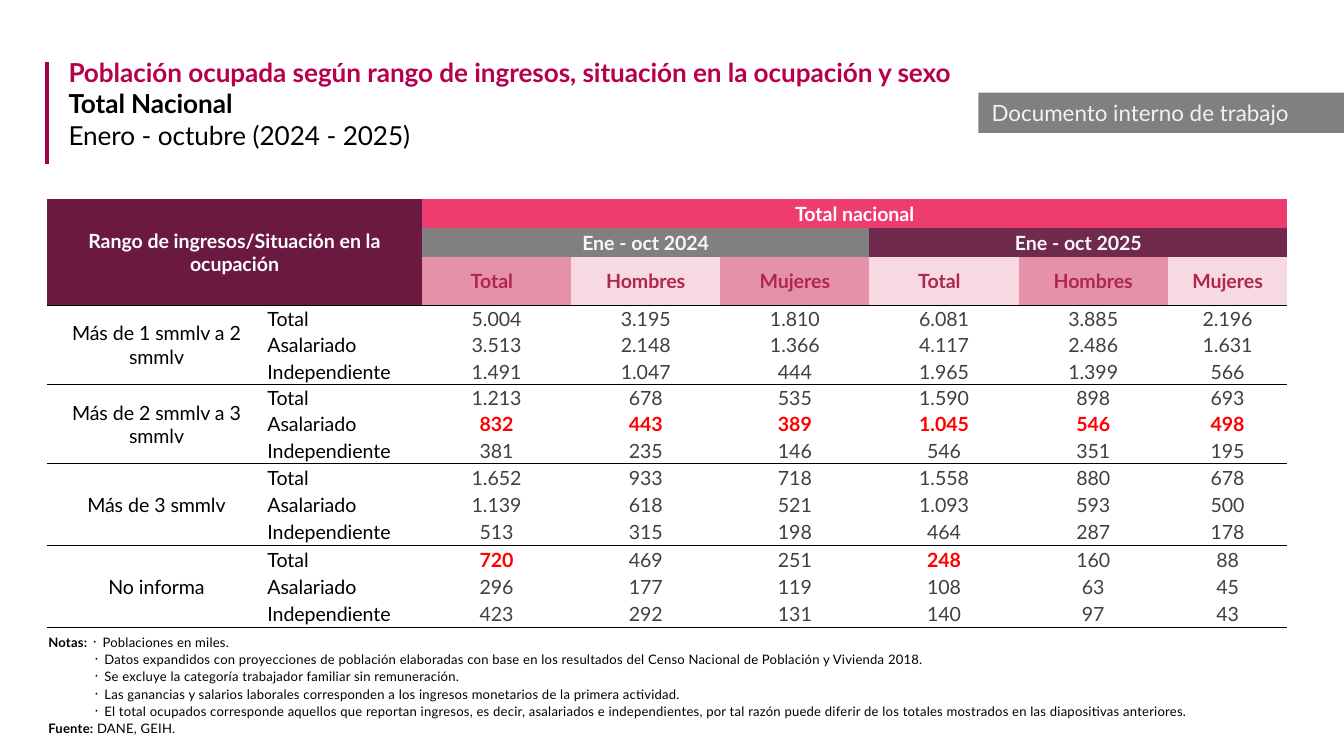
from dataclasses import dataclass
from typing import Optional

from lxml.etree import SubElement
from pptx import Presentation
from pptx.dml.color import RGBColor
from pptx.enum.shapes import MSO_CONNECTOR as Connector, MSO_SHAPE as Shape
from pptx.enum.text import MSO_ANCHOR as Anchor, PP_ALIGN as Align
from pptx.oxml.ns import qn
from pptx.util import Inches, Pt


@dataclass(frozen=True)
class Theme:
    font: str = "Lato"
    title_size: float = 14
    tag_size: float = 12
    table_size: float = 10.5
    note_size: float = 7
    title: str = "B6004B"
    accent: str = "9C0646"
    black: str = "000000"
    white: str = "FFFFFF"
    tag_text: str = "F2F2F2"
    period_text: str = "F8F8F8"
    figure: str = "404040"
    alert: str = "FF0000"
    column_text: str = "AD2750"
    gray: str = "808080"
    wine: str = "6B1940"
    plum: str = "6F2A4D"
    pink: str = "EF3C6F"
    rose: str = "E691AA"
    blush: str = "F7D9E1"


@dataclass(frozen=True)
class Header:
    row: int
    column: int
    last_row: int
    last_column: int
    text: str
    fill: str
    color: str
    right_margin: float = 0.01


@dataclass(frozen=True)
class IncomeGroup:
    name: str
    height: float
    rows: tuple[str, str, str]


THEME = Theme()
COLUMN_WIDTHS = [1.63, 1.16] + [1.11] * 5 + [0.89]
HEADER_HEIGHTS = [0.22, 0.21, 0.36]
OCCUPATIONS = ("Total", "Asalariado", "Independiente")
PLAIN_STYLE = "{2D5ABB26-0587-4C30-8999-92F81FD0307C}"

HEADERS = [
    Header(0, 0, 2, 1, "Rango de ingresos/Situación en la ocupación", THEME.wine, THEME.white),
    Header(0, 2, 0, 7, "Total nacional", THEME.pink, THEME.white),
    Header(1, 2, 1, 4, "Ene - oct 2024", THEME.gray, THEME.period_text),
    Header(1, 5, 1, 7, "Ene - oct 2025", THEME.plum, THEME.period_text),
] + [
    Header(2, 2 + index, 2, 2 + index, text, (THEME.rose, THEME.blush)[index % 2],
           THEME.column_text, 0.08 if text == "Total" else 0.01)
    for index, text in enumerate(("Total", "Hombres", "Mujeres") * 2)
]

GROUPS = [
    IncomeGroup("Más de 1 smmlv a 2 smmlv", 0.59, (
        "5.004 3.195 1.810 6.081 3.885 2.196",
        "3.513 2.148 1.366 4.117 2.486 1.631",
        "1.491 1.047 444 1.965 1.399 566")),
    IncomeGroup("Más de 2 smmlv a 3 smmlv", 0.59, (
        "1.213 678 535 1.590 898 693",
        "832 443 389 1.045 546 498",
        "381 235 146 546 351 195")),
    IncomeGroup("Más de 3 smmlv", 0.61, (
        "1.652 933 718 1.558 880 678",
        "1.139 618 521 1.093 593 500",
        "513 315 198 464 287 178")),
    IncomeGroup("No informa", 0.61, (
        "720 469 251 248 160 88",
        "296 177 119 108 63 45",
        "423 292 131 140 97 43")),
]
HIGHLIGHTS = {(7, column) for column in range(2, 8)} | {(12, 2), (12, 5)}

NOTES = [
    "Poblaciones en miles.",
    "Datos expandidos con proyecciones de población elaboradas con base en los resultados "
    "del Censo Nacional de Población y Vivienda 2018.",
    "Se excluye la categoría trabajador familiar sin remuneración.",
    "Las ganancias y salarios laborales corresponden a los ingresos monetarios de la primera actividad.",
    "El total ocupados corresponde aquellos que reportan ingresos, es decir, asalariados e "
    "independientes, por tal razón puede diferir de los totales mostrados en las diapositivas anteriores.",
]


def set_font(font, size: float, color: str, bold: Optional[bool] = False, spacing: int = 0) -> None:
    font.name = THEME.font
    font.size = Pt(size)
    font.bold = bold
    font.color.rgb = RGBColor.from_string(color)
    if spacing:
        font._rPr.set("spc", str(spacing))


def add_box(page, left: float, top: float, width: float, height: float, margins: tuple):
    box = page.shapes.add_textbox(Inches(left), Inches(top), Inches(width), Inches(height))
    frame = box.text_frame
    frame.word_wrap = True
    frame.margin_left, frame.margin_top, frame.margin_right, frame.margin_bottom = map(Inches, margins)
    return frame


def next_para(frame, index: int):
    return frame.add_paragraph() if index else frame.paragraphs[0]


def add_title(page) -> None:
    frame = add_box(page, 0.44, 0.38, 9.56, 0.78, (0.07, 0.04, 0.07, 0.04))
    lines = [
        ("Población ocupada según rango de ingresos, situación en la ocupación y sexo", THEME.title, True),
        ("Total Nacional", THEME.black, True),
        ("Enero - octubre (2024 - 2025)", THEME.black, False),
    ]
    for index, (text, color, bold) in enumerate(lines):
        para = next_para(frame, index)
        para.text = text
        set_font(para.font, THEME.title_size, color, bold, -5)
    rule = page.shapes.add_connector(
        Connector.STRAIGHT, Inches(0.35), Inches(1.22), Inches(0.35), Inches(0.46))
    rule.line.color.rgb = RGBColor.from_string(THEME.accent)
    rule.line.width = Pt(2)
    SubElement(rule._element.spPr, qn("a:effectLst"))


def add_tag(page) -> None:
    tag = page.shapes.add_shape(Shape.RECTANGLE, Inches(7.28), Inches(0.69), Inches(2.72), Inches(0.3))
    tag.shadow.inherit = False
    tag.fill.solid()
    tag.fill.fore_color.rgb = RGBColor.from_string(THEME.gray)
    tag.line.fill.background()
    tag.text_frame.vertical_anchor = Anchor.TOP
    para = tag.text_frame.paragraphs[0]
    para.text = "Documento interno de trabajo"
    para.alignment = Align.LEFT
    set_font(para.font, THEME.tag_size, THEME.tag_text)


def write_cell(cell, text: str, color: str, bold: bool = False, align: Align = Align.CENTER) -> None:
    para = cell.text_frame.paragraphs[0]
    para.text = text
    para.alignment = align
    set_font(para.font, THEME.table_size, color, bold)


def set_borders(cell, top: bool, bottom: bool) -> None:
    properties = cell._tc.get_or_add_tcPr()
    for side, visible in (("lnL", False), ("lnR", False), ("lnT", top), ("lnB", bottom)):
        line = SubElement(properties, qn(f"a:{side}"), w=str(Pt(0.5)))
        if visible:
            fill = SubElement(line, qn("a:solidFill"))
            SubElement(fill, qn("a:srgbClr"), val=THEME.black)
        else:
            SubElement(line, qn("a:noFill"))


def add_income_table(page) -> None:
    size = len(OCCUPATIONS)
    heights = HEADER_HEIGHTS + [group.height / size for group in GROUPS for _ in OCCUPATIONS]
    table = page.shapes.add_table(
        len(heights), len(COLUMN_WIDTHS), Inches(0.35), Inches(1.48),
        Inches(sum(COLUMN_WIDTHS)), Inches(sum(heights))).table
    table.first_row = table.horz_banding = False
    table._tbl.tblPr.find(qn("a:tableStyleId")).text = PLAIN_STYLE
    for column, width in zip(table.columns, COLUMN_WIDTHS):
        column.width = Inches(width)
    for row, height in zip(table.rows, heights):
        row.height = Inches(height)

    first_body = len(HEADER_HEIGHTS)
    for row_index, row in enumerate(table.rows):
        in_body = row_index >= first_body
        starts_group = in_body and row_index % size == 0
        ends_group = row_index >= first_body - 1 and row_index % size == size - 1
        for column_index, cell in enumerate(row.cells):
            cell.vertical_anchor = Anchor.MIDDLE
            cell.margin_left = cell.margin_top = cell.margin_right = Inches(0.01)
            cell.margin_bottom = 0
            spans_group = column_index == 0 and row_index % size == 0
            set_borders(cell, starts_group, ends_group or spans_group)
            cell.fill.background()
            SubElement(cell.text_frame.paragraphs[0]._p, qn("a:endParaRPr"),
                       sz=str(int(THEME.table_size * 100)))

    for header in HEADERS:
        cell = table.cell(header.row, header.column)
        if (header.row, header.column) != (header.last_row, header.last_column):
            cell.merge(table.cell(header.last_row, header.last_column))
        cell.fill.solid()
        cell.fill.fore_color.rgb = RGBColor.from_string(header.fill)
        cell.margin_right = Inches(header.right_margin)
        write_cell(cell, header.text, header.color, True)

    for group_index, group in enumerate(GROUPS):
        top = first_body + group_index * size
        name_cell = table.cell(top, 0)
        name_cell.merge(table.cell(top + size - 1, 0))
        write_cell(name_cell, group.name, THEME.black)
        for row, (occupation, figures) in enumerate(zip(OCCUPATIONS, group.rows), top):
            write_cell(table.cell(row, 1), occupation, THEME.black, align=Align.LEFT)
            for column, figure in enumerate(figures.split(), 2):
                alert = (row, column) in HIGHLIGHTS
                write_cell(table.cell(row, column), figure, THEME.alert if alert else THEME.figure, alert)


def add_notes(page) -> None:
    frame = add_box(page, 0.35, 4.68, 9.24, 0.8, (0, 0.01, 0, 0))
    frame.vertical_anchor = Anchor.BOTTOM
    lines = [("Notas: " if index == 0 else "", f"᛫ {note}") for index, note in enumerate(NOTES)]
    lines.append(("Fuente: ", "DANE, GEIH."))
    for index, (label, text) in enumerate(lines):
        para = next_para(frame, index)
        para.line_spacing = 1.04
        para.space_before = Pt(0.6 if index else 0)
        para._p.get_or_add_pPr().set("marL", str(Inches(0.01 if label else 0.34)))
        set_font(para.font, THEME.note_size, THEME.black, None, 13)
        if label:
            span = para.add_run()
            span.text = label
            span.font.bold = True
        para.add_run().text = text


def main() -> None:
    deck = Presentation()
    deck.slide_width = Inches(10)
    deck.slide_height = deck.slide_width * 9 // 16
    page = deck.slides.add_slide(deck.slide_layouts[6])
    add_title(page)
    add_tag(page)
    add_notes(page)
    add_income_table(page)
    deck.save("out.pptx")


if __name__ == "__main__":
    main()
